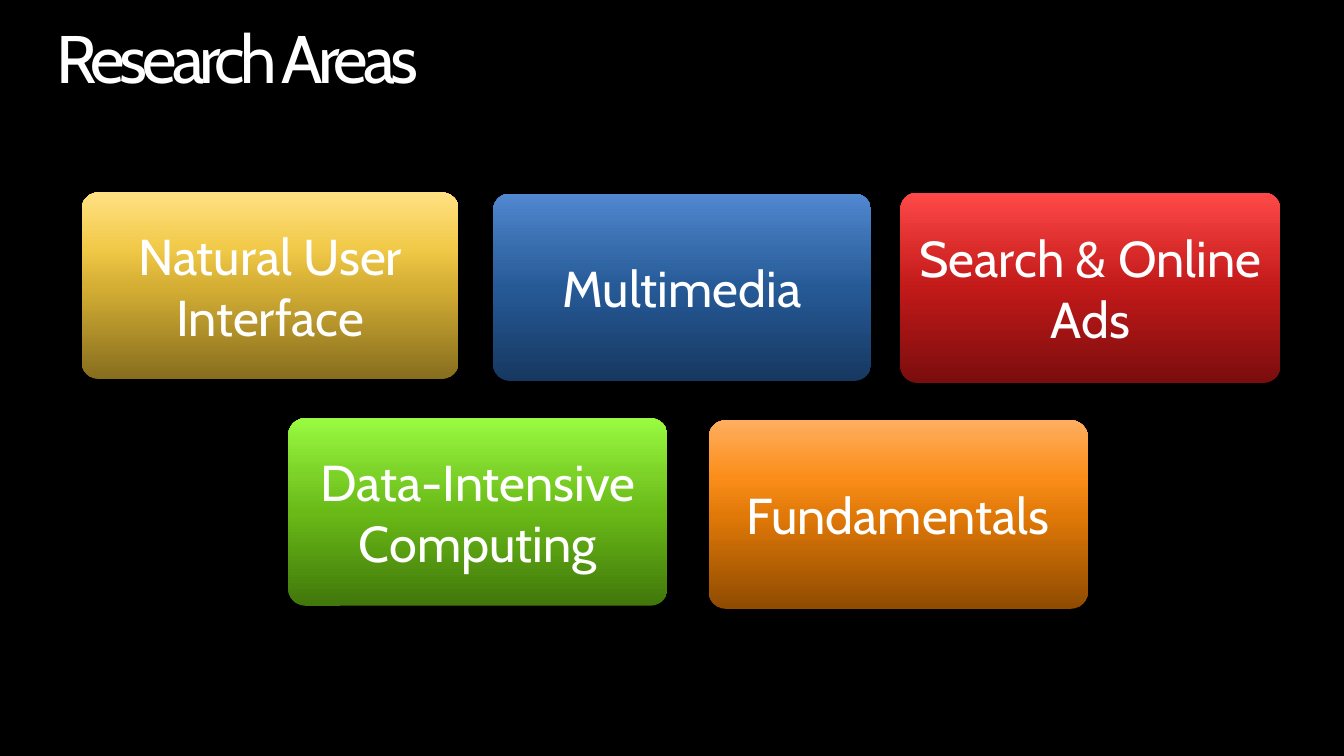
from lxml.etree import SubElement
from pptx import Presentation
from pptx.dml.color import RGBColor
from pptx.enum.shapes import MSO_SHAPE
from pptx.enum.text import MSO_ANCHOR, MSO_AUTO_SIZE, PP_ALIGN
from pptx.oxml.ns import qn
from pptx.util import Emu, Pt

PX = 9144  # 100 px to the inch
FONT = "Cabin"
STOPS = (0, 50, 70, 100)
UP, DOWN = 90, 270  # counter-clockwise gradient angles

# Label, (left, top, width, height), gradient from bottom to top
AREAS = [
    ("Search & Online Ads", (893, 191, 377, 189), ("7B0D0D", "C21919", "DA2B2B", "FF4949")),
    ("Multimedia", (489, 192, 375, 186), ("163860", "265A97", "376CAC", "5188D0")),
    ("Natural User Interface", (81, 191, 374, 185), ("876E1E", "D5AF34", "F1C948", "FFE183")),
    ("Fundamentals", (703, 417, 376, 187), ("8F4B01", "E17908", "FB8E1A", "FFAE5F")),
    ("Data-Intensive Computing", (286, 415, 376, 186), ("41770B", "69BA17", "7CD228", "99FB41")),
]


def px(length):
    return Emu(length * PX)


def color(hex_value):
    return RGBColor.from_string(hex_value)


def set_gradient(fill, stops, angle):
    fill.gradient()
    fill.gradient_angle = angle
    stop_list = fill.gradient_stops[0]._gs.getparent()
    for old_stop in list(stop_list):
        stop_list.remove(old_stop)
    for position, hex_value in stops:
        stop = SubElement(stop_list, qn("a:gs"), pos=str(position * 1000))
        SubElement(stop, qn("a:srgbClr"), val=hex_value)


def add_shadow(shape, hex_value, alpha, blur, distance):
    shape.shadow.inherit = False
    effects = shape._element.spPr.find(qn("a:effectLst"))
    shadow = SubElement(effects, qn("a:outerShdw"), blurRad=str(Pt(blur)),
                        dist=str(Pt(distance)), dir="5400000", rotWithShape="0")
    tint = SubElement(shadow, qn("a:srgbClr"), val=hex_value)
    SubElement(tint, qn("a:alpha"), val=str(alpha * 1000))


def write_text(frame, text, *, size, align, anchor, insets, fill="FFFFFF",
               gradient=None, line_spacing=None, tracking=None):
    frame.word_wrap = True
    frame.auto_size = MSO_AUTO_SIZE.NONE
    frame.vertical_anchor = anchor
    frame.margin_left = frame.margin_right = px(insets[0])
    frame.margin_top = frame.margin_bottom = px(insets[1])
    paragraph = frame.paragraphs[0]
    paragraph.alignment = align
    if line_spacing:
        paragraph.line_spacing = line_spacing
    run = paragraph.add_run()
    run.text = text
    run.font.size = Pt(size)
    run.font.name = FONT
    if gradient:
        set_gradient(run.font.fill, gradient, DOWN)
    else:
        run.font.color.rgb = color(fill)
    if tracking:
        run._r.get_or_add_rPr().set("spc", str(round(tracking * 100)))


def place_title(slide, box):
    title = slide.shapes.title
    title.left, title.top, title.width, title.height = map(px, box)
    write_text(title.text_frame, "Research Areas", size=48, align=PP_ALIGN.LEFT,
               anchor=MSO_ANCHOR.TOP, insets=(0, 0), line_spacing=0.9, tracking=-3.6,
               gradient=[(28, "FFFFFF"), (68, "FFDF79")])


def add_area(slide, box, label, shades):
    card = slide.shapes.add_shape(MSO_SHAPE.ROUNDED_RECTANGLE, *map(px, box))
    card.adjustments[0] = 0.09
    set_gradient(card.fill, zip(STOPS, shades), UP)
    card.line.fill.background()
    add_shadow(card, "000000", alpha=45, blur=5, distance=3)
    write_text(card.text_frame, label, size=36, align=PP_ALIGN.CENTER,
               anchor=MSO_ANCHOR.MIDDLE, insets=(10, 5))


def main():
    deck = Presentation()
    deck.slide_width, deck.slide_height = px(1333), px(750)
    slide = deck.slides.add_slide(deck.slide_layouts[5])
    slide.background.fill.solid()
    slide.background.fill.fore_color.rgb = color("000000")

    # Heading
    place_title(slide, (56, 25, 1221, 73))

    # Research area cards
    for label, box, shades in AREAS:
        add_area(slide, box, label, shades)

    deck.save("out.pptx")


if __name__ == "__main__":
    main()
